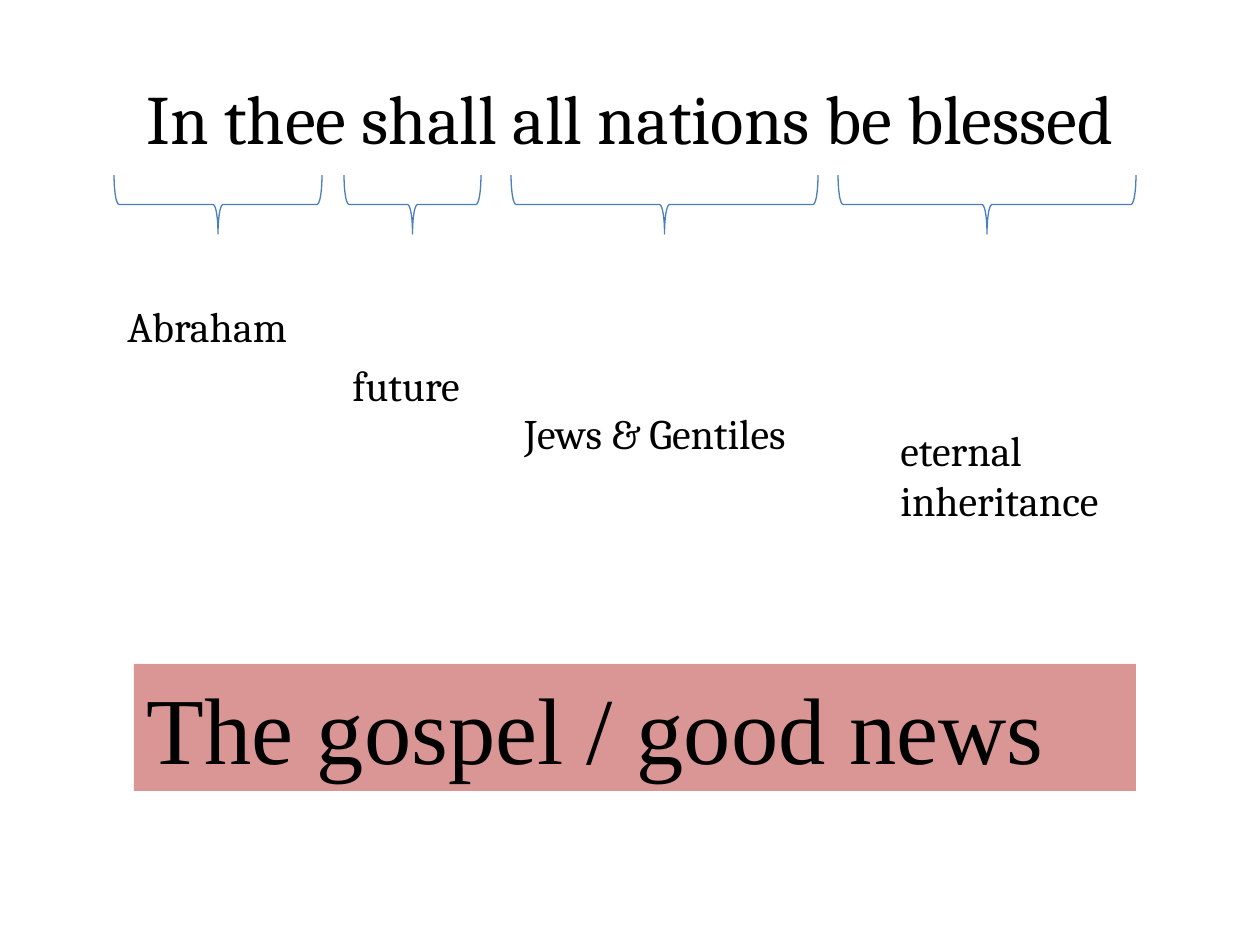
from dataclasses import dataclass
from typing import Any

from pptx import Presentation
from pptx.dml.color import RGBColor
from pptx.enum.shapes import MSO_SHAPE as Shape
from pptx.enum.text import MSO_ANCHOR as Anchor, MSO_AUTO_SIZE as AutoSize, PP_ALIGN as Align
from pptx.util import Emu, Pt

EMU_PER_PX = 914400 / 126


def px(*lengths):
    """Turn pixel lengths into EMU."""
    return [Emu(round(length * EMU_PER_PX)) for length in lengths]


def color(hex_value):
    """Turn a hex string into a colour."""
    return RGBColor.from_string(hex_value)


def write(frame, text, *, size, font, ink, align=Align.LEFT, anchor=Anchor.TOP,
          fit=AutoSize.SHAPE_TO_FIT_TEXT):
    """Put one formatted paragraph into a text frame."""
    frame.word_wrap = True
    frame.auto_size = fit
    frame.vertical_anchor = anchor
    paragraph = frame.paragraphs[0]
    paragraph.alignment = align
    run = paragraph.add_run()
    run.text = text
    run.font.size = Pt(size)
    run.font.name = font
    run.font.color.rgb = color(ink)


@dataclass
class VerseSlide:
    """Hold the style and the current slide."""
    slide: Any
    body_font: str = "Cambria"
    banner_font: str = "Times New Roman"
    ink: str = "000000"
    brace_line: str = "4B7EBC"
    banner_fill: str = "D99694"

    def title(self, text, left, top, width, height):
        """Place the verse in the title placeholder."""
        verse = self.slide.shapes.title
        verse.left, verse.top, verse.width, verse.height = px(left, top, width, height)
        write(verse.text_frame, text, size=39.6, font=self.body_font, ink=self.ink,
              align=Align.CENTER, anchor=Anchor.MIDDLE, fit=AutoSize.NONE)

    def brace(self, left, top, span, depth):
        """Draw a brace that opens upwards across a span."""
        middle_x, middle_y = left + span / 2, top + depth / 2
        brace = self.slide.shapes.add_shape(
            Shape.RIGHT_BRACE, *px(middle_x - depth / 2, middle_y - span / 2, depth, span))
        brace.rotation = 90
        brace.shadow.inherit = False
        brace.fill.background()
        brace.line.color.rgb = color(self.brace_line)
        brace.line.width = Pt(0.75)

    def meaning(self, text, left, top, width, height):
        """Add the meaning of one part of the verse."""
        meaning = self.slide.shapes.add_textbox(*px(left, top, width, height))
        write(meaning.text_frame, text, size=24, font=self.body_font, ink=self.ink)

    def banner(self, text, left, top, width, height):
        """Add the filled summary bar."""
        banner = self.slide.shapes.add_shape(Shape.RECTANGLE, *px(left, top, width, height))
        banner.shadow.inherit = False
        banner.fill.solid()
        banner.fill.fore_color.rgb = color(self.banner_fill)
        banner.line.fill.background()
        write(banner.text_frame, text, size=54, font=self.banner_font, ink=self.ink)


def main():
    """Build and save the slide."""
    presentation = Presentation()
    presentation.slide_width, presentation.slide_height = px(1260, 945)
    verse = VerseSlide(presentation.slides.add_slide(presentation.slide_layouts[5]))

    verse.title("In thee shall all nations be blessed", 63, 38, 1134, 158)
    for left, span in ((114, 208), (344, 137), (511, 307), (838, 298)):
        verse.brace(left, 175, span, 59)
    for text, *box in (
        ("Abraham", 115, 294, 228, 63),
        ("future", 340, 353, 180, 63),
        ("Jews & Gentiles", 512, 401, 326, 63),
        ("eternal inheritance", 888, 418, 248, 115),
    ):
        verse.meaning(text, *box)
    verse.banner("The gospel / good news", 134, 664, 1002, 127)

    presentation.save("out.pptx")


if __name__ == "__main__":
    main()
